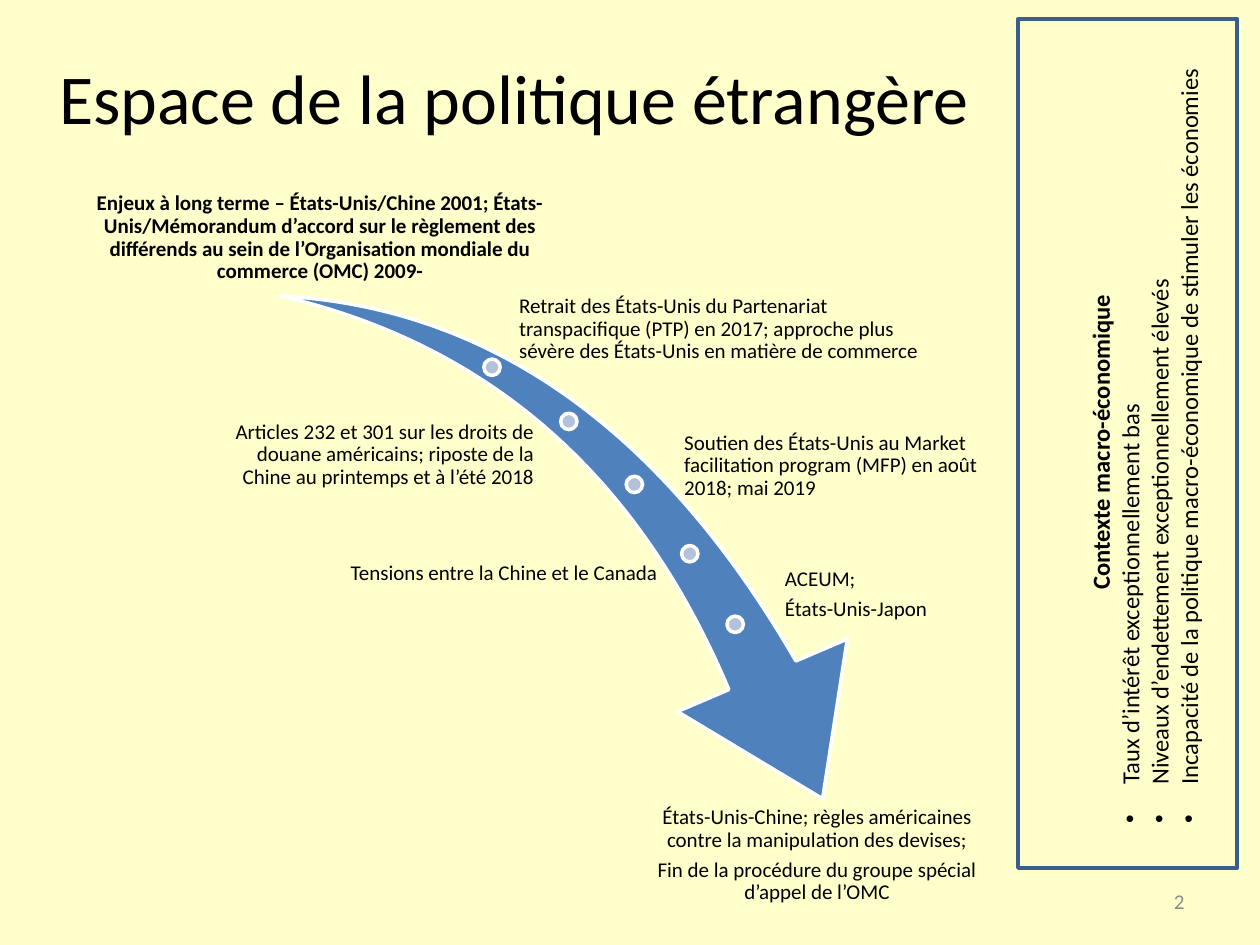
from pptx import Presentation
from pptx.dml.color import RGBColor
from pptx.enum.shapes import MSO_SHAPE
from pptx.enum.text import MSO_ANCHOR, PP_ALIGN
from pptx.oxml.ns import qn
from pptx.util import Inches, Pt
from lxml import etree

LEFT, CENTER, RIGHT = PP_ALIGN.LEFT, PP_ALIGN.CENTER, PP_ALIGN.RIGHT
TOP, MIDDLE, BOTTOM = MSO_ANCHOR.TOP, MSO_ANCHOR.MIDDLE, MSO_ANCHOR.BOTTOM
SWOOSH, OVAL, RECTANGLE = MSO_SHAPE.SWOOSH_ARROW, MSO_SHAPE.OVAL, MSO_SHAPE.RECTANGLE

FONT = "Calibri"
COLUMNS, ROWS = 100, 75
CELL = Inches(0.1)
DOT = 1.3

# Column and row of the upper left corner of each milestone on the arrow
MILESTONES = [(38.4, 28.5), (44.5, 32.8), (49.7, 37.8), (54.1, 43.3), (57.7, 48.9)]

# Column, row, columns, rows, alignment, anchor, bold, paragraphs
EVENTS = [
    (6.8, 13.3, 37.2, 9.4, CENTER, BOTTOM, True,
     ["Enjeux à long terme – États-Unis/Chine 2001; États-Unis/Mémorandum d’accord "
      "sur le règlement des différends au sein de l’Organisation mondiale du "
      "commerce (OMC) 2009-"]),
    (41, 20.8, 33.7, 10.7, LEFT, MIDDLE, False,
     ["Retrait des États-Unis du Partenariat transpacifique (PTP) en 2017; approche "
      "plus sévère des États-Unis en matière de commerce"]),
    (17.3, 31.4, 25.3, 9.4, RIGHT, MIDDLE, False,
     ["Articles 232 et 301 sur les droits de douane américains; riposte de la Chine "
      "au printemps et à l’été 2018"]),
    (54.1, 32.3, 25.2, 9.4, LEFT, MIDDLE, False,
     ["Soutien des États-Unis au Market facilitation program (MFP) en "
      "août 2018; mai 2019"]),
    (20.1, 40.8, 32.3, 9.4, RIGHT, MIDDLE, False,
     ["Tensions entre la Chine et le Canada"]),
    (62.1, 42.5, 13.1, 9.4, LEFT, MIDDLE, False,
     ["ACEUM;", "États-Unis-Japon"]),
    (50, 63.8, 29.7, 7.9, CENTER, TOP, False,
     ["États-Unis-Chine; règles américaines contre la manipulation des devises;",
      "Fin de la procédure du groupe spécial d’appel de l’OMC"]),
]

CONTEXT_HEADING = "Contexte macro-économique"
CONTEXT_POINTS = [
    "Taux d’intérêt exceptionnellement bas",
    "Niveaux d’endettement exceptionnellement élevés",
    "Incapacité de la politique macro-économique de stimuler les économies",
]


def rgb(value):
    return RGBColor.from_string(value)


def grid(*cells):
    return [round(cell * CELL) for cell in cells]


def style(paragraph, size, align=LEFT, color="000000", bold=False):
    paragraph.alignment = align
    paragraph.font.name = FONT
    paragraph.font.size = Pt(size)
    paragraph.font.bold = bold
    paragraph.font.color.rgb = rgb(color)


def add_bullet(paragraph):
    properties = paragraph._p.get_or_add_pPr()
    properties.set("marL", str(Inches(0.31)))
    properties.set("indent", str(-Inches(0.31)))
    etree.SubElement(properties, qn("a:buFont")).set("typeface", "Arial")
    etree.SubElement(properties, qn("a:buChar")).set("char", "•")


def add_paragraphs(frame, texts):
    frame.text = "\n".join(texts)
    return frame.paragraphs


def add_text_frame(slide, cells, anchor, inset=None):
    frame = slide.shapes.add_textbox(*grid(*cells)).text_frame
    frame.word_wrap = True
    frame.vertical_anchor = anchor
    if inset is not None:
        frame.margin_left = frame.margin_right = Inches(inset)
        frame.margin_top = frame.margin_bottom = Inches(inset)
    return frame


def add_figure(slide, preset, cells, line, fill=None):
    figure = slide.shapes.add_shape(preset, *grid(*cells))
    figure.shadow.inherit = False
    if fill:
        figure.fill.solid()
        figure.fill.fore_color.rgb = rgb(fill)
    else:
        figure.fill.background()
    figure.line.color.rgb = rgb(line)
    figure.line.width = Pt(2)
    return figure


def add_title(slide, text):
    title = slide.shapes.title
    title.left, title.top, title.width, title.height = grid(-4.2, 1.4, 90, 12.5)
    title.text_frame.text = text
    title.text_frame.vertical_anchor = MIDDLE
    style(title.text_frame.paragraphs[0], 40, CENTER)


def add_timeline(slide):
    arrow = add_figure(slide, SWOOSH, (21.1, 25, 50.6, 35.3), "FFFFFF", "4F81BD")
    arrow.rotation = 73.3
    arrow.adjustments[0] = 0.163
    arrow.adjustments[1] = 0.314
    for column, row in MILESTONES:
        add_figure(slide, OVAL, (column, row, DOT, DOT), "FFFFFF", "B3C1DB")


def add_event(slide, column, row, columns, rows, align, anchor, bold, texts):
    frame = add_text_frame(slide, (column, row, columns, rows), anchor, inset=0.02)
    for paragraph in add_paragraphs(frame, texts):
        style(paragraph, 12, align, bold=bold)
        paragraph.line_spacing = 0.9
        paragraph.space_after = Pt(4.2)


def add_context(slide):
    add_figure(slide, RECTANGLE, (80.8, 1.5, 17.4, 67.4), "3A5F8C")
    frame = add_text_frame(slide, (59.6, 29.9, 62.5, 10.4), TOP)
    frame._parent.rotation = 270
    frame.word_wrap = False
    heading, *points = add_paragraphs(frame, [CONTEXT_HEADING, *CONTEXT_POINTS])
    style(heading, 14, CENTER, bold=True)
    for point in points:
        style(point, 14)
        add_bullet(point)


def add_page_number(slide, number):
    frame = add_text_frame(slide, (71.7, 69.5, 23.3, 4), MIDDLE)
    frame.text = number
    style(frame.paragraphs[0], 12, RIGHT, "8C8C8C")


def main():
    deck = Presentation()
    deck.slide_width, deck.slide_height = grid(COLUMNS, ROWS)
    slide = deck.slides.add_slide(deck.slide_layouts[5])
    slide.background.fill.solid()
    slide.background.fill.fore_color.rgb = rgb("FFFFCC")

    add_title(slide, "Espace de la politique étrangère")
    add_timeline(slide)
    for event in EVENTS:
        add_event(slide, *event)
    add_page_number(slide, "2")
    add_context(slide)
    deck.save("out.pptx")


if __name__ == "__main__":
    main()
